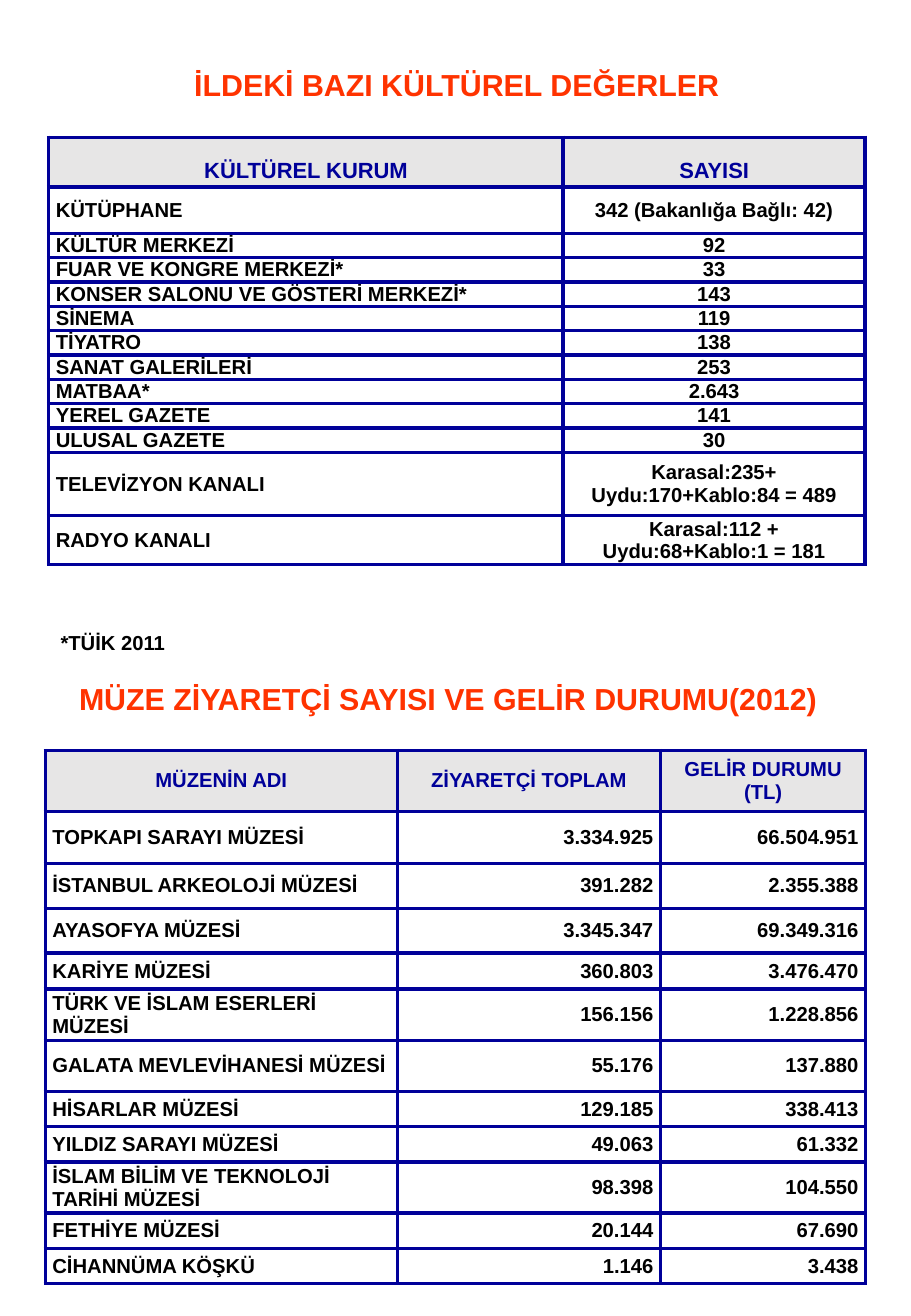
from dataclasses import dataclass

from lxml import etree
from pptx import Presentation
from pptx.dml.color import RGBColor
from pptx.enum.text import MSO_ANCHOR, PP_ALIGN
from pptx.oxml.ns import qn
from pptx.util import Pt

LEFT, CENTER, RIGHT = PP_ALIGN.LEFT, PP_ALIGN.CENTER, PP_ALIGN.RIGHT
TOP, MIDDLE, BOTTOM = MSO_ANCHOR.TOP, MSO_ANCHOR.MIDDLE, MSO_ANCHOR.BOTTOM
FONT = "Arial"
ORANGE, NAVY, BLACK, WHITE, GRAY = "FF3300", "000099", "000000", "FFFFFF", "E7E6E6"
BORDER_WIDTH = 2.25


@dataclass
class TableSpec:
    left: float
    top: float
    widths: list[float]
    heights: list[float]
    rows: list[tuple[str, ...]]
    value_align: PP_ALIGN
    header_size: float
    header_anchor: MSO_ANCHOR
    header_margins: tuple[float, float]


@dataclass
class CellStyle:
    size: float
    color: str
    fill: str
    anchor: MSO_ANCHOR
    margins: tuple[float, float]


CULTURE = TableSpec(
    28.8, 81.3, [305, 179], [29.5, 27.4] + [14.45] * 9 + [37.6, 29],
    [
        ("KÜLTÜREL KURUM", "SAYISI"),
        ("KÜTÜPHANE", "342 (Bakanlığa Bağlı: 42)"),
        ("KÜLTÜR MERKEZİ", "92"),
        ("FUAR VE KONGRE MERKEZİ*", "33"),
        ("KONSER SALONU VE GÖSTERİ MERKEZİ*", "143"),
        ("SİNEMA", "119"),
        ("TİYATRO", "138"),
        ("SANAT GALERİLERİ", "253"),
        ("MATBAA*", "2.643"),
        ("YEREL GAZETE", "141"),
        ("ULUSAL GAZETE", "30"),
        ("TELEVİZYON KANALI", "Karasal:235+ Uydu:170+Kablo:84 = 489"),
        ("RADYO KANALI", "Karasal:112 + Uydu:68+Kablo:1 = 181"),
    ],
    CENTER, 13, BOTTOM, (2.9, 2.2),
)
MUSEUMS = TableSpec(
    26.8, 444.7, [208.8, 156, 121.6],
    [36, 31, 26.5, 26.5, 21.4, 30.4, 30.2, 21, 21, 30.3, 20.9, 20.9],
    [
        ("MÜZENİN ADI", "ZİYARETÇİ TOPLAM", "GELİR DURUMU (TL)"),
        ("TOPKAPI SARAYI MÜZESİ", "3.334.925", "66.504.951"),
        ("İSTANBUL ARKEOLOJİ MÜZESİ", "391.282", "2.355.388"),
        ("AYASOFYA MÜZESİ", "3.345.347", "69.349.316"),
        ("KARİYE MÜZESİ", "360.803", "3.476.470"),
        ("TÜRK VE İSLAM ESERLERİ MÜZESİ", "156.156", "1.228.856"),
        ("GALATA MEVLEVİHANESİ MÜZESİ", "55.176", "137.880"),
        ("HİSARLAR MÜZESİ", "129.185", "338.413"),
        ("YILDIZ SARAYI MÜZESİ", "49.063", "61.332"),
        ("İSLAM BİLİM VE TEKNOLOJİ TARİHİ MÜZESİ", "98.398", "104.550"),
        ("FETHİYE MÜZESİ", "20.144", "67.690"),
        ("CİHANNÜMA KÖŞKÜ", "1.146", "3.438"),
    ],
    RIGHT, 12, MIDDLE, (2.2, 0),
)


def rgb(color: str) -> RGBColor:
    return RGBColor.from_string(color)


def write(tf, text: str, size: float, color: str, align: PP_ALIGN) -> None:
    tf.word_wrap = True
    p = tf.paragraphs[0]
    p.alignment = align
    r = p.add_run()
    r.text = text
    r.font.name, r.font.size, r.font.bold = FONT, Pt(size), True
    r.font.color.rgb = rgb(color)


def place(sp, left: float, top: float, width: float, height: float) -> None:
    sp.left, sp.top, sp.width, sp.height = Pt(left), Pt(top), Pt(width), Pt(height)


def add_borders(cell) -> None:
    tc_pr = cell._tc.get_or_add_tcPr()
    for i, side in enumerate(("lnL", "lnR", "lnT", "lnB")):
        ln = etree.Element(qn(f"a:{side}"), w=str(Pt(BORDER_WIDTH)))
        fill = etree.SubElement(ln, qn("a:solidFill"))
        etree.SubElement(fill, qn("a:srgbClr"), val=NAVY)
        tc_pr.insert(i, ln)


def fill_cell(cell, text: str, style: CellStyle, align: PP_ALIGN) -> None:
    cell.fill.solid()
    cell.fill.fore_color.rgb = rgb(style.fill)
    cell.vertical_anchor = style.anchor
    side, end = style.margins
    cell.margin_left = cell.margin_right = Pt(side)
    cell.margin_top = cell.margin_bottom = Pt(end)
    write(cell.text_frame, text, style.size, style.color, align)
    add_borders(cell)


def draw_table(s, spec: TableSpec) -> None:
    table = s.shapes.add_table(
        len(spec.rows), len(spec.widths), Pt(spec.left), Pt(spec.top),
        Pt(sum(spec.widths)), Pt(sum(spec.heights)),
    ).table
    table.first_row = table.horz_banding = False
    for column, width in zip(table.columns, spec.widths):
        column.width = Pt(width)
    for row, height in zip(table.rows, spec.heights):
        row.height = Pt(height)
    header = CellStyle(spec.header_size, NAVY, GRAY, spec.header_anchor, spec.header_margins)
    body = CellStyle(12, BLACK, WHITE, MIDDLE, (4.3, 0))
    for i, values in enumerate(spec.rows):
        for j, text in enumerate(values):
            if i == 0:
                fill_cell(table.cell(i, j), text, header, CENTER)
            else:
                fill_cell(table.cell(i, j), text, body, spec.value_align if j else LEFT)


def main() -> None:
    """Build the slide of cultural institutions and museum visitors."""
    prs = Presentation()
    prs.slide_width, prs.slide_height = Pt(540), Pt(779.76)
    s = prs.slides.add_slide(prs.slide_layouts[5])

    title = s.shapes.title
    place(title, 28.8, 38.2, 484, 42.5)
    title.text_frame.vertical_anchor = TOP
    write(title.text_frame, "İLDEKİ BAZI KÜLTÜREL DEĞERLER", 18, ORANGE, CENTER)
    title.text_frame.paragraphs[0].line_spacing = 0.9
    draw_table(s, CULTURE)

    note = s.shapes.add_textbox(Pt(28.8), Pt(370), Pt(137.5), Pt(21.6))
    write(note.text_frame, "*TÜİK 2011", 12, BLACK, LEFT)

    heading = s.shapes.add_textbox(Pt(28.8), Pt(399.6), Pt(484), Pt(51))
    heading.text_frame.margin_right = Pt(17.2)
    write(heading.text_frame, "MÜZE ZİYARETÇİ SAYISI VE GELİR DURUMU(2012)", 18, ORANGE, CENTER)
    draw_table(s, MUSEUMS)

    prs.save("out.pptx")


if __name__ == "__main__":
    main()
